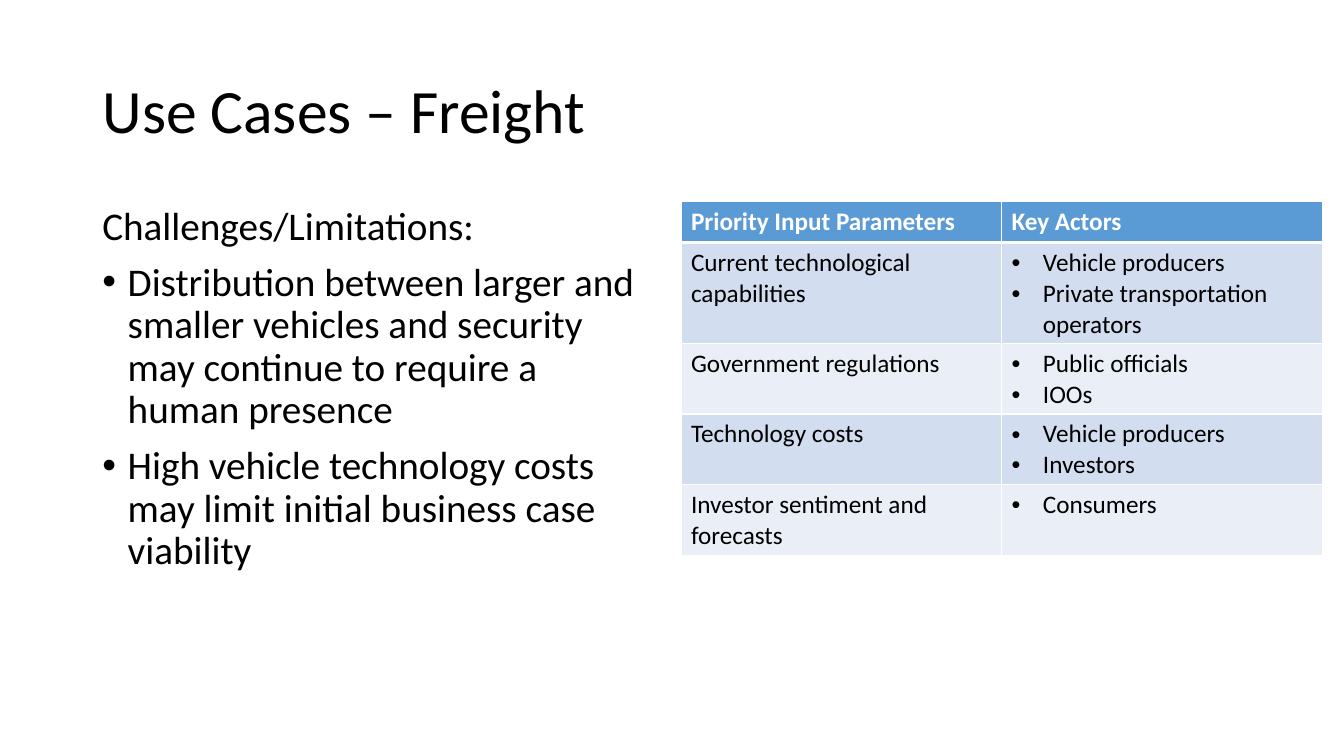
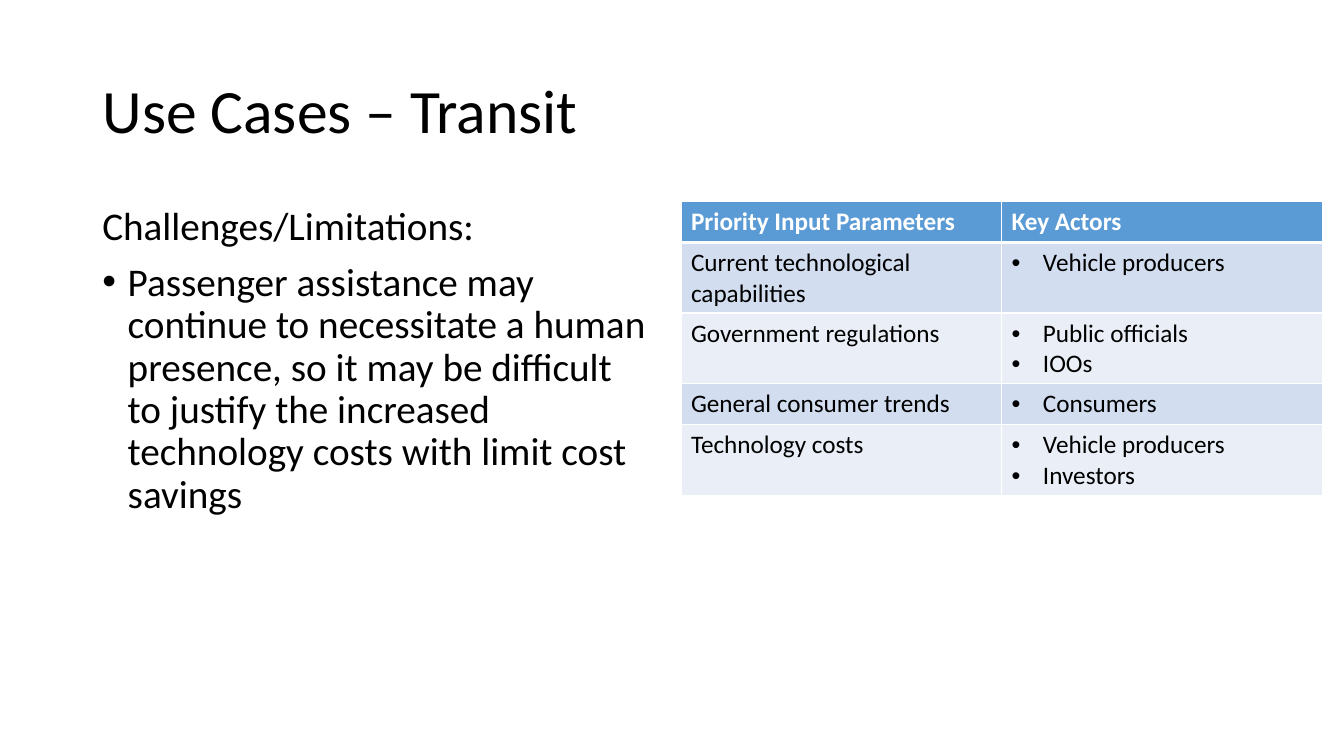
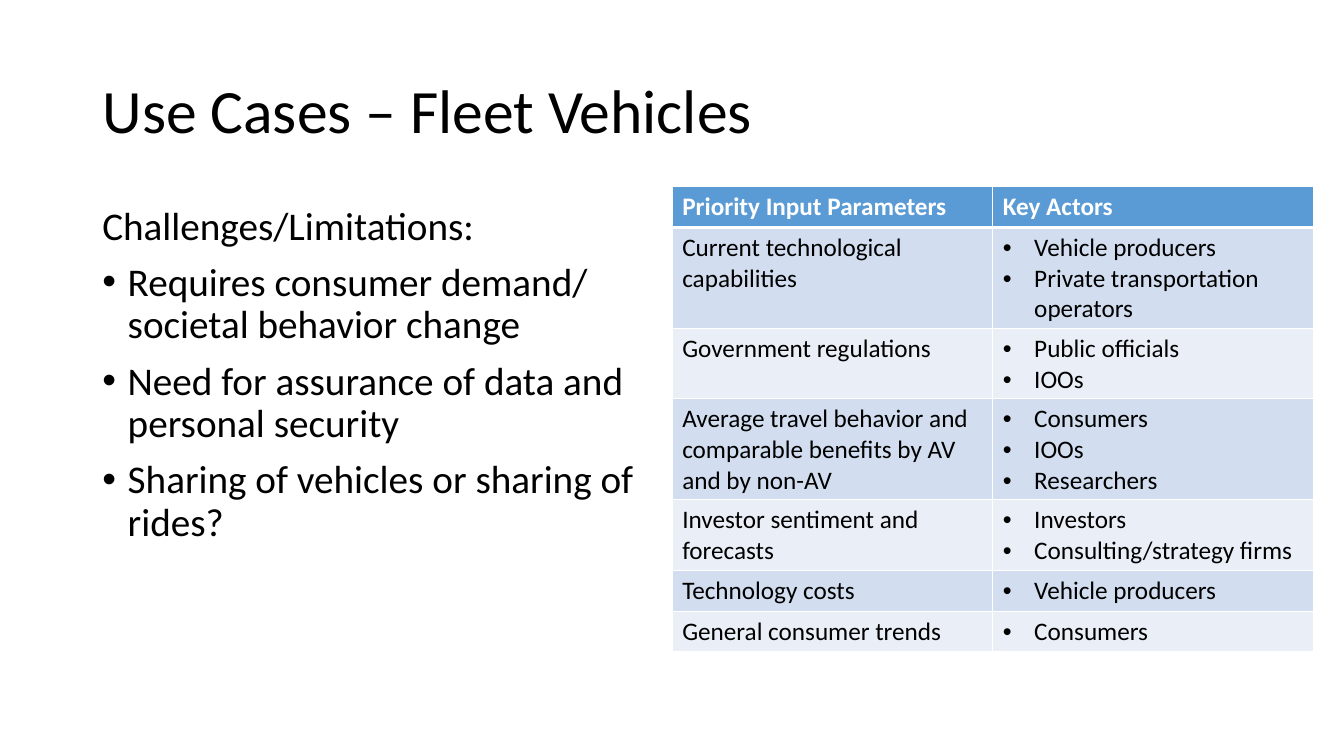
from lxml import etree
from pptx import Presentation
from pptx.dml.color import RGBColor
from pptx.enum import text
from pptx.oxml import ns
from pptx.util import Cm, Pt

FONT = "Calibri"
BLACK, WHITE, BLUE = "000000", "FFFFFF", "5B9BD5"
BANDS = ("D2DEEF", "EAEFF7")
TITLE_BOX = (2.33, 1.01, 29.21, 3.68)
BODY_BOX = (2.33, 5.07, 14.4, 12.09)
TABLE_WIDTH, ROW_HEIGHT = 16.16, 1.03
HEADINGS = ("Priority Input Parameters", "Key Actors")

CAPABILITIES = "Current technological capabilities"
REGULATIONS = ("Government regulations", ["Public officials", "IOOs"])
COSTS = "Technology costs"
SENTIMENT = "Investor sentiment and forecasts"
TRENDS = ("General consumer trends", ["Consumers"])
PRODUCERS = "Vehicle producers"
OPERATORS = "Private transportation operators"

USE_CASES = [
    {
        "name": "Freight",
        "challenges": [
            "Distribution between larger and smaller vehicles and security may "
            "continue to require a human presence",
            "High vehicle technology costs may limit initial business case viability",
        ],
        "table_at": (17.16, 5.08),
        "rows": [
            (CAPABILITIES, [PRODUCERS, OPERATORS]),
            REGULATIONS,
            (COSTS, [PRODUCERS, "Investors"]),
            (SENTIMENT, ["Consumers"]),
        ],
    },
    {
        "name": "Transit",
        "challenges": [
            "Passenger assistance may continue to necessitate a human presence, so it "
            "may be difficult to justify the increased technology costs with limit "
            "cost savings",
        ],
        "table_at": (17.16, 5.08),
        "rows": [
            (CAPABILITIES, [PRODUCERS]),
            REGULATIONS,
            TRENDS,
            (COSTS, [PRODUCERS, "Investors"]),
        ],
    },
    {
        "name": "Fleet Vehicles",
        "challenges": [
            "Requires consumer demand/ societal behavior change",
            "Need for assurance of data and personal security",
            "Sharing of vehicles or sharing of rides?",
        ],
        "table_at": (16.94, 4.7),
        "rows": [
            (CAPABILITIES, [PRODUCERS, OPERATORS]),
            REGULATIONS,
            ("Average travel behavior and comparable benefits by AV and by non-AV",
             ["Consumers", "IOOs", "Researchers"]),
            (SENTIMENT, ["Investors", "Consulting/strategy firms"]),
            (COSTS, [PRODUCERS]),
            TRENDS,
        ],
    },
]


def rgb(value):
    return RGBColor.from_string(value)


def style_runs(frame, size, color=BLACK, bold=False):
    for para in frame.paragraphs:
        for span in para.runs:
            span.font.name = FONT
            span.font.size = Pt(size)
            span.font.bold = bold
            span.font.color.rgb = rgb(color)


def add_bullet(para, indent):
    props = para._p.get_or_add_pPr()
    props.set("marL", str(Cm(indent)))
    props.set("indent", str(-Cm(indent)))
    etree.SubElement(props, ns.qn("a:buFont")).set("typeface", "Arial")
    etree.SubElement(props, ns.qn("a:buChar")).set("char", "•")


def set_borders(cell, top=1, bottom=1):
    props = cell._tc.get_or_add_tcPr()
    for side, width in (("L", 1), ("R", 1), ("T", top), ("B", bottom)):
        line = etree.SubElement(props, ns.qn("a:ln" + side))
        line.set("w", str(Pt(width)))
        fill = etree.SubElement(line, ns.qn("a:solidFill"))
        etree.SubElement(fill, ns.qn("a:srgbClr")).set("val", WHITE)


def place_title(page, box, title):
    shape = page.shapes.title
    shape.left, shape.top, shape.width, shape.height = map(Cm, box)
    frame = shape.text_frame
    frame.text = title
    frame.auto_size = text.MSO_AUTO_SIZE.NONE
    frame.vertical_anchor = text.MSO_ANCHOR.MIDDLE
    para = frame.paragraphs[0]
    para.alignment = text.PP_ALIGN.LEFT
    para.line_spacing = 0.9
    style_runs(frame, 44)


def place_challenges(page, box, challenges):
    frame = page.shapes.add_textbox(*map(Cm, box)).text_frame
    frame.word_wrap = True
    frame.text = "\n".join(["Challenges/Limitations:", *challenges])
    for index, para in enumerate(frame.paragraphs):
        para.line_spacing = 0.9
        if index:
            para.space_before = Pt(10)
            add_bullet(para, 0.64)
    style_runs(frame, 28)


def fill_cell(cell, content, fill, color=BLACK, bold=False):
    cell.text_frame.text = content
    cell.fill.solid()
    cell.fill.fore_color.rgb = rgb(fill)
    style_runs(cell.text_frame, 18, color, bold)


def place_actor_table(page, left, top, rows):
    count = len(rows) + 1
    table = page.shapes.add_table(
        count, 2, Cm(left), Cm(top), Cm(TABLE_WIDTH), Cm(ROW_HEIGHT * count)).table
    for cell, heading in zip(table.rows[0].cells, HEADINGS):
        set_borders(cell, bottom=3)
        fill_cell(cell, heading, BLUE, WHITE, True)
    for index, (parameter, actors) in enumerate(rows):
        band = BANDS[index % 2]
        for cell, content in zip(table.rows[index + 1].cells,
                                 (parameter, "\n".join(actors))):
            set_borders(cell, top=1 if index else 3)
            fill_cell(cell, content, band)
        for para in cell.text_frame.paragraphs:
            add_bullet(para, 0.79)


def add_use_case(deck, case):
    page = deck.slides.add_slide(deck.slide_layouts[5])
    place_title(page, TITLE_BOX, f"Use Cases – {case['name']}")
    place_challenges(page, BODY_BOX, case["challenges"])
    place_actor_table(page, *case["table_at"], case["rows"])


def main():
    deck = Presentation()
    deck.slide_width, deck.slide_height = Cm(33.87), Cm(19.05)
    for case in USE_CASES:
        add_use_case(deck, case)
    deck.save("out.pptx")


if __name__ == "__main__":
    main()
